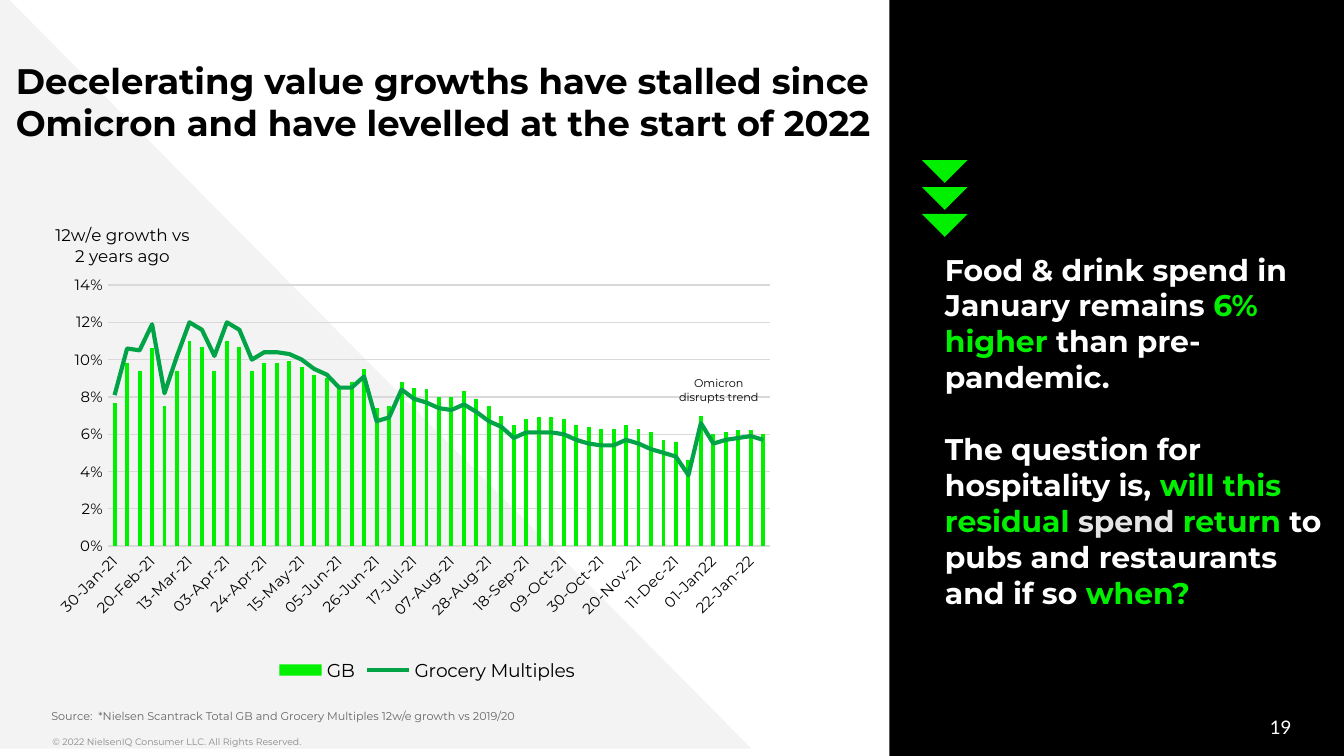
import pptx
import pptx.chart.data
import pptx.dml.color
import pptx.enum.chart
import pptx.enum.shapes
import pptx.enum.text
import pptx.oxml
import pptx.oxml.ns
import pptx.util

Cm = pptx.util.Cm
Pt = pptx.util.Pt
RGBColor = pptx.dml.color.RGBColor
Shape = pptx.enum.shapes.MSO_SHAPE
Align = pptx.enum.text.PP_ALIGN
Anchor = pptx.enum.text.MSO_ANCHOR
ChartEnum = pptx.enum.chart
qn = pptx.oxml.ns.qn

BLACK = RGBColor(0x00, 0x00, 0x00)
WHITE = RGBColor(0xFF, 0xFF, 0xFF)
PALE = RGBColor(0xF3, 0xF3, 0xF3)
LIGHT = RGBColor(0xE5, 0xE5, 0xE5)
GRID = RGBColor(0xD9, 0xD9, 0xD9)
GREY = RGBColor(0x88, 0x88, 0x88)
DARK_GREY = RGBColor(0x66, 0x66, 0x66)
LIME = RGBColor(0x00, 0xF0, 0x00)
GREEN = RGBColor(0x00, 0xA3, 0x46)
FONT = "Montserrat"

TITLE = "Decelerating value growths have stalled since Omicron and have levelled at the start of 2022"
SOURCE = "Source:  *Nielsen Scantrack Total GB and Grocery Multiples 12w/e growth vs 2019/20"
COPYRIGHT = "© 2022 NielsenIQ Consumer LLC. All Rights Reserved."
MESSAGE = [
    [("Food & drink spend in January remains ", WHITE), ("6% higher ", LIME), ("than pre-pandemic.", WHITE)],
    [("The question for hospitality is, ", WHITE), ("will this residual", LIME), (" spend ", LIGHT),
     ("return", LIME), (" to pubs and restaurants and if so ", WHITE), ("when?", LIME)],
]
AXIS_TITLE = "12w/e growth vs\n2 years ago"
WEEKS = """30-Jan-21 06-Feb-21 13-Feb-21 20-Feb-21 27-Feb-21 06-Mar-21 13-Mar-21 20-Mar-21 27-Mar-21
03-Apr-21 10-Apr-21 17-Apr-21 24-Apr-21 01-May-21 08-May-21 15-May-21 22-May-21 29-May-21
05-Jun-21 12-Jun-21 19-Jun-21 26-Jun-21 03-Jul-21 10-Jul-21 17-Jul-21 24-Jul-21 31-Jul-21
07-Aug-21 14-Aug-21 21-Aug-21 28-Aug-21 04-Sep-21 11-Sep-21 18-Sep-21 25-Sep-21 02-Oct-21
09-Oct-21 16-Oct-21 23-Oct-21 30-Oct-21 06-Nov-21 13-Nov-21 20-Nov-21 27-Nov-21 04-Dec-21
11-Dec-21 18-Dec-21 25-Dec-21 01-Jan22 08-Jan-22 15-Jan-22 22-Jan-22 29-Jan-22""".split()
GROWTH_PER_MILLE = {
    "GB": [77, 98, 94, 106, 75, 94, 110, 107, 94, 110, 107, 94, 98, 98, 99, 96, 92, 90, 86, 88, 95, 74, 75, 88,
           85, 84, 80, 80, 83, 79, 75, 70, 65, 68, 69, 69, 68, 65, 64, 63, 63, 65, 63, 61, 57, 56, 46, 70, 60,
           61, 62, 62, 60],
    "Grocery Multiples": [81, 106, 105, 119, 82, 102, 120, 116, 102, 120, 116, 100, 104, 104, 103, 100, 95, 92,
                          85, 85, 91, 67, 69, 84, 79, 77, 74, 73, 76, 72, 67, 64, 58, 61, 61, 61, 60, 57, 55,
                          54, 54, 57, 55, 52, 50, 48, 38, 66, 55, 57, 58, 59, 57],
}


def style(font, size, color=BLACK, bold=False, name=FONT):
    font.name, font.size, font.bold = name, Pt(size), bold
    font.color.rgb = color


def place(box, left, top, width, height):
    box.left, box.top, box.width, box.height = Cm(left), Cm(top), Cm(width), Cm(height)


def set_frame(box, inset, anchor=Anchor.TOP):
    frame = box.text_frame
    frame.word_wrap = True
    frame.auto_size = pptx.enum.text.MSO_AUTO_SIZE.NONE
    frame.vertical_anchor = anchor
    frame.margin_left = frame.margin_right = 0
    frame.margin_top = frame.margin_bottom = Cm(inset)
    return frame


def style_frame(frame, size, color=BLACK, bold=False, align=Align.LEFT, name=FONT):
    for para in frame.paragraphs:
        para.alignment = align
        for span in para.runs:
            style(span.font, size, color, bold, name)


def add_text(page, position, text, size, color, inset=0.13, anchor=Anchor.TOP, align=Align.LEFT, name=FONT):
    box = page.shapes.add_textbox(*map(Cm, position))
    frame = set_frame(box, inset, anchor)
    frame.text = text
    style_frame(frame, size, color, align=align, name=name)


def add_block(page, kind, position, color, rotation=0):
    block = page.shapes.add_shape(kind, *map(Cm, position))
    block.shadow.inherit = False
    block.fill.solid()
    block.fill.fore_color.rgb = color
    block.line.fill.background()
    block.rotation = rotation


def element(tag, content="", attributes=""):
    return pptx.oxml.parse_xml(
        f'<{tag} {pptx.oxml.ns.nsdecls("c", "a")} {attributes}>{content}</{tag}>')


def set_layout(parent, index, fields):
    for old in parent.findall(qn("c:layout")):
        parent.remove(old)
    content = "".join(f'<c:{key} val="{value}"/>' for key, value in fields.items())
    parent.insert(index, element("c:layout", f"<c:manualLayout>{content}</c:manualLayout>"))


def add_line_plot(chart):
    bars = chart.plots[0]._element
    series = bars.findall(qn("c:ser"))[1]
    for flag in series.findall(qn("c:invertIfNegative")):
        series.remove(flag)
    axes = "".join(f'<c:axId val="{axis.get("val")}"/>' for axis in bars.findall(qn("c:axId")))
    lines = element("c:lineChart", '<c:grouping val="standard"/><c:varyColors val="0"/>'
                                   f'<c:marker val="1"/>{axes}')
    lines.insert(2, series)
    bars.addnext(lines)


def add_growth_chart(page):
    data = pptx.chart.data.CategoryChartData(number_format="0.0%")
    data.categories = WEEKS
    for name, values in GROWTH_PER_MILLE.items():
        data.add_series(name, [value / 1000 for value in values])
    chart = page.shapes.add_chart(ChartEnum.XL_CHART_TYPE.COLUMN_CLUSTERED,
                                  Cm(0.97), Cm(4.04), Cm(14.2), Cm(8.94), data).chart
    style(chart.font, 10)
    chart.has_title = False
    chart.has_legend = True
    chart.legend.position = ChartEnum.XL_LEGEND_POSITION.BOTTOM
    chart.legend.include_in_layout = False
    style(chart.legend.font, 10)
    add_line_plot(chart)

    bars, lines = chart.plots
    bars.gap_width = 219
    bars.vary_by_categories = False
    fill = bars.series[0].format.fill
    fill.solid()
    fill.fore_color.rgb = LIME
    trend = lines.series[0]
    trend.smooth = False
    trend.marker.style = ChartEnum.XL_MARKER_STYLE.NONE
    trend.format.line.color.rgb = GREEN
    trend.format.line.width = Pt(2.25)

    weeks, growth = chart.category_axis, chart.value_axis
    for axis in (weeks, growth):
        axis.major_tick_mark = axis.minor_tick_mark = ChartEnum.XL_TICK_MARK.NONE
        style(axis.tick_labels.font, 8)
    growth.minimum_scale, growth.maximum_scale, growth.major_unit = 0, 0.14, 0.02
    growth.tick_labels.number_format = "0%"
    growth.tick_labels.number_format_is_linked = False
    growth.format.line.fill.background()
    for line in (weeks.format.line, growth.major_gridlines.format.line):
        line.color.rgb = GRID
        line.width = Pt(0.75)
    weeks._element.find(qn("c:txPr")).find(qn("a:bodyPr")).set("rot", "-2700000")
    weeks._element.find(qn("c:noMultiLvlLbl")).addprevious(
        element("c:tickLblSkip", attributes='val="3"'))

    frame = growth.axis_title.text_frame
    frame.text = AXIS_TITLE
    style_frame(frame, 9, align=Align.CENTER)
    frame._txBody.bodyPr.set("rot", "0")
    frame._txBody.bodyPr.set("vert", "horz")
    set_layout(growth.axis_title._element, 1, {"xMode": "edge", "yMode": "edge", "x": 0.0, "y": 0.01})
    body = chart._chartSpace.find(qn("c:chart"))
    set_layout(body.find(qn("c:plotArea")), 0, {
        "layoutTarget": "inner", "xMode": "edge", "yMode": "edge",
        "x": 0.076, "y": 0.151, "w": 0.88, "h": 0.552})
    body.addnext(element("c:spPr", "<a:noFill/><a:ln><a:noFill/></a:ln>"))


def main():
    deck = pptx.Presentation()
    deck.slide_width, deck.slide_height = Cm(25.4), Cm(14.29)
    page = deck.slides.add_slide(deck.slide_layouts[5])

    add_block(page, Shape.RECTANGLE, (16.81, -0.05, 8.71, 14.38), BLACK)
    add_block(page, Shape.RIGHT_TRIANGLE, (0, -0.18, 14.2, 14.33), PALE)
    add_text(page, (0.99, 13.79, 14.07, 0.51), COPYRIGHT, 5, GREY)
    add_text(page, (18.69, 13.36, 5.72, 0.76), "19", 10, WHITE,
             anchor=Anchor.MIDDLE, align=Align.RIGHT, name="Lato")

    message = page.shapes.add_textbox(Cm(17.86), Cm(4.62), Cm(7.24), Cm(7.09))
    frame = set_frame(message, 0.13)
    for index, spans in enumerate(MESSAGE):
        para = frame.add_paragraph() if index else frame.paragraphs[0]
        if index:
            para.space_before = Pt(19.5)
        for text, color in spans:
            span = para.add_run()
            span.text = text
            style(span.font, 16, color, bold=True)

    for index in range(3):
        add_block(page, Shape.RIGHT_TRIANGLE, (17.55, 2.72 + index * 0.51, 0.61, 0.61), LIME, 315)

    title = page.shapes.title
    title.element.getparent().append(title.element)
    place(title, 0.3, 0.86, 16.76, 1.85)
    set_frame(title, 0.25).text = TITLE
    style_frame(title.text_frame, 19, bold=True)

    add_text(page, (0.97, 13.41, 15.42, 0.51), SOURCE, 6, DARK_GREY, inset=0.25, anchor=Anchor.BOTTOM)
    add_growth_chart(page)
    add_text(page, (12.19, 6.99, 2.79, 0.76), "Omicron\ndisrupts trend", 6, BLACK, align=Align.CENTER)
    deck.save("out.pptx")


if __name__ == "__main__":
    main()
